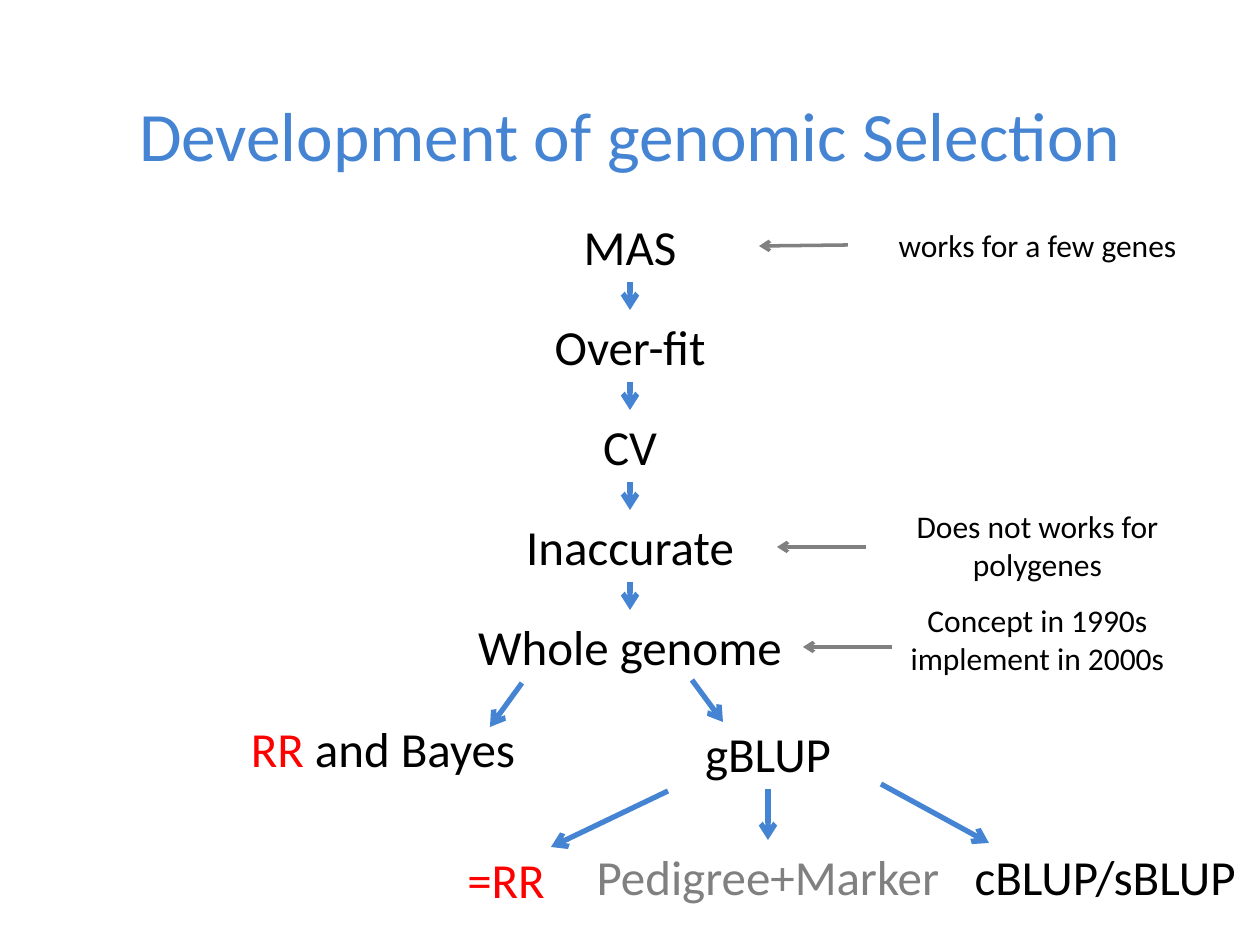
from pptx import Presentation
from pptx.dml.color import RGBColor
from pptx.enum.shapes import MSO_CONNECTOR as CONN
from pptx.enum.text import MSO_ANCHOR as ANCHOR, MSO_AUTO_SIZE as FIT, PP_ALIGN as ALIGN
from pptx.oxml.ns import qn
from pptx.util import Emu, Pt
from lxml.etree import SubElement

BLUE = RGBColor(0x45, 0x84, 0xD3)
BLACK = RGBColor(0, 0, 0)
RED = RGBColor(0xFF, 0, 0)
GRAY = RGBColor(0x80, 0x80, 0x80)
TOP, LEFT, BOTTOM, RIGHT = range(4)


def px(n):
    """Turn px into EMU at 126 px to the inch."""
    return Emu(round(n * 914400 / 126))


class Deck:
    """Hold the style and the current slide."""

    font = "Calibri"

    def __init__(self, width, height):
        """Start a presentation of the given size."""
        self.prs = Presentation()
        self.prs.slide_width, self.prs.slide_height = px(width), px(height)

    def add_slide(self, title):
        """Add a title-only slide with its title."""
        self.s = self.prs.slides.add_slide(self.prs.slide_layouts[5])
        sp = self.s.shapes.title
        sp.left, sp.top, sp.width, sp.height = map(px, (63, 47, 1134, 173))
        sp.text_frame.vertical_anchor = ANCHOR.MIDDLE
        sp.text_frame.text = title
        self.style(sp.text_frame.paragraphs[0], 39.6, BLUE)

    def style(self, p, size, color):
        """Centre a paragraph and set its font."""
        p.alignment = ALIGN.CENTER
        p.font.name, p.font.size = self.font, Pt(size)
        p.font.color.rgb = color

    def text(self, text, x, y, w, h=72, size=28, color=BLACK):
        """Add a centred text box and return it."""
        sp = self.s.shapes.add_textbox(*map(px, (x, y, w, h)))
        tf = sp.text_frame
        tf.word_wrap, tf.auto_size = True, FIT.SHAPE_TO_FIT_TEXT
        p = tf.paragraphs[0]
        p.add_run().text = text
        self.style(p, size, color)
        return sp

    def note(self, text, y, h):
        """Add a small remark in the right column and return it."""
        return self.text(text, 848, y, 379, h, size=18)

    def arrow(self, x1, y1, x2, y2, color=BLUE, width=3):
        """Add an open-headed arrow and return it."""
        c = self.s.shapes.add_connector(CONN.STRAIGHT, *map(px, (x1, y1, x2, y2)))
        c.line.color.rgb, c.line.width = color, Pt(width)
        SubElement(c.line._get_or_add_ln(), qn("a:tailEnd"), type="arrow")
        SubElement(c._element.spPr, qn("a:effectLst"))
        return c

    def join(self, a, side_a, b, side_b, **style):
        """Add an arrow joined to the sides of two boxes."""
        c = self.arrow(0, 0, 0, 0, **style)
        c.begin_connect(a, side_a)
        c.end_connect(b, side_b)


def main():
    """Build the slide."""
    deck = Deck(1260, 945)
    deck.add_slide("Development of genomic Selection")

    steps = [deck.text(name, 630 - w // 2, 210 + 100 * i, w) for i, (name, w) in enumerate([
        ("MAS", 258), ("Over-fit", 258), ("CV", 258), ("Inaccurate", 258), ("Whole genome", 366)])]
    few_genes = deck.note("works for a few genes", 220, 50)
    deck.note("Does not works for polygenes", 501, 90)
    deck.note("Concept in 1990s implement in 2000s", 595, 90)

    bayes = deck.text("RR", 200, 712, 366, color=RED)
    r = bayes.text_frame.paragraphs[0].add_run()
    r.text = " and Bayes"
    r.font.color.rgb = BLACK
    gblup = deck.text("gBLUP", 585, 717, 366)
    deck.text("=RR", 427, 843, 158, color=RED)
    pedigree = deck.text("Pedigree+Marker", 554, 840, 428, color=GRAY)
    deck.text("cBLUP/sBLUP", 950, 840, 310)

    for a, b in zip(steps, steps[1:]):
        deck.join(a, BOTTOM, b, TOP)
    deck.join(gblup, BOTTOM, pedigree, TOP)
    for ends in [(522, 683, 490, 727), (692, 680, 723, 722),
                 (668, 791, 551, 847), (881, 784, 989, 843)]:
        deck.arrow(*ends)

    deck.join(few_genes, LEFT, steps[0], RIGHT, color=GRAY, width=2)
    for x, y in [(866, 547), (892, 647)]:
        deck.arrow(x, y, x - 89, y, color=GRAY, width=2)

    deck.prs.save("out.pptx")


if __name__ == "__main__":
    main()
